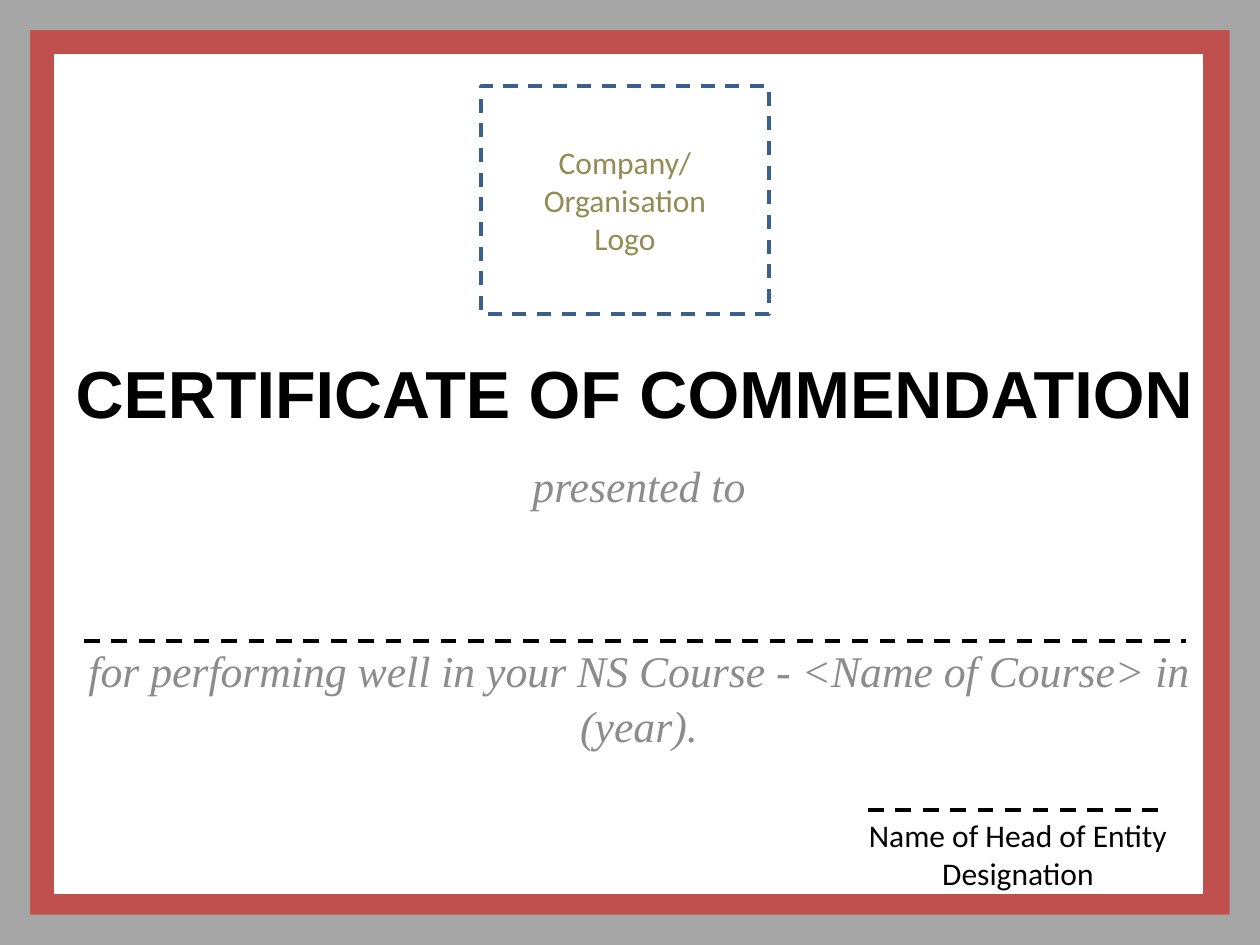
from dataclasses import dataclass

from lxml import etree
from pptx import Presentation
from pptx.dml.color import RGBColor
from pptx.enum import dml, shapes, text
from pptx.oxml.ns import qn
from pptx.util import Pt

SCALE = 914400 / 126
BLACK = RGBColor(0x00, 0x00, 0x00)
GRAY = RGBColor(0xA6, 0xA6, 0xA6)
SOFT = RGBColor(0x8C, 0x8C, 0x8C)
RED = RGBColor(0xC0, 0x50, 0x4D)
BLUE = RGBColor(0x3A, 0x5F, 0x8C)
TAN = RGBColor(0x94, 0x8A, 0x54)


@dataclass(frozen=True)
class Box:
    x: int
    y: int
    w: int
    h: int


@dataclass(frozen=True)
class Style:
    font: str
    size: int
    color: RGBColor
    bold: bool = False
    italic: bool = False
    pitch: float = 1.0
    gap: int = 0


@dataclass(frozen=True)
class Label:
    box: Box
    lines: tuple[str, ...]
    style: Style
    anchor: text.MSO_ANCHOR = text.MSO_ANCHOR.TOP
    wrap: bool = True


@dataclass(frozen=True)
class Frame:
    box: Box
    edge: float
    color: RGBColor
    line: int = 0


@dataclass(frozen=True)
class Rule:
    x: int
    y: int
    end: int


PAGE = Box(0, 0, 1260, 945)
LOGO = Box(481, 86, 288, 228)
TITLE = Style("Arial", 38, BLACK, bold=True)
BODY = Style("Times New Roman", 25, SOFT, italic=True, pitch=1.05, gap=74)

LABELS = (
    Label(Box(-35, 290, 1339, 203), ("CERTIFICATE OF COMMENDATION",), TITLE,
          text.MSO_ANCHOR.MIDDLE),
    Label(Box(64, 450, 1150, 321),
          ("presented to",
           "for performing well in your NS Course - <Name of Course> in (year)."),
          BODY),
    Label(Box(854, 810, 328, 89), ("Name of Head of Entity", "Designation"),
          Style("Calibri", 18, BLACK), wrap=False),
)
FRAMES = (
    Frame(Box(18, 18, 1221, 912), 0.038, RED, 2),
    Frame(PAGE, 0.032, GRAY),
)
RULES = (Rule(84, 641, 1186), Rule(868, 810, 1167))


def px(n: int) -> int:
    return round(n * SCALE)


def area(box: Box) -> tuple[int, int, int, int]:
    return px(box.x), px(box.y), px(box.w), px(box.h)


def write(frame, lines: tuple[str, ...], style: Style, anchor, wrap: bool = True) -> None:
    frame.word_wrap = wrap
    frame.vertical_anchor = anchor
    for i, line in enumerate(lines):
        para = frame.paragraphs[0] if i == 0 else frame.add_paragraph()
        para.text = line
        para.alignment = text.PP_ALIGN.CENTER
        para.line_spacing = style.pitch
        para.space_before = Pt(style.gap if i else 0)
        font = para.font
        font.name, font.size = style.font, Pt(style.size)
        font.bold, font.italic = style.bold, style.italic
        font.color.rgb = style.color


def stroke(line, color: RGBColor, width: float, dash: bool = False) -> None:
    line.color.rgb = color
    line.width = Pt(width)
    if dash:
        line.dash_style = dml.MSO_LINE.DASH


def add_label(slide, label: Label) -> None:
    shape = slide.shapes.add_textbox(*area(label.box))
    write(shape.text_frame, label.lines, label.style, label.anchor, label.wrap)


def add_frame(slide, frame: Frame) -> None:
    shape = slide.shapes.add_shape(shapes.MSO_SHAPE.FRAME, *area(frame.box))
    shape.shadow.inherit = False
    shape.adjustments[0] = frame.edge
    shape.fill.solid()
    shape.fill.fore_color.rgb = frame.color
    if frame.line:
        stroke(shape.line, frame.color, frame.line)
    else:
        shape.line.fill.background()


def add_logo(slide) -> None:
    """Draw the dashed space that is kept for a logo."""
    shape = slide.shapes.add_shape(shapes.MSO_SHAPE.RECTANGLE, *area(LOGO))
    shape.shadow.inherit = False
    shape.fill.background()
    stroke(shape.line, BLUE, 2, dash=True)
    write(shape.text_frame, ("Company/", "Organisation", "Logo"),
          Style("Calibri", 18, TAN), text.MSO_ANCHOR.MIDDLE)


def add_rule(slide, rule: Rule) -> None:
    line = slide.shapes.add_connector(
        shapes.MSO_CONNECTOR.STRAIGHT,
        px(rule.x), px(rule.y), px(rule.end), px(rule.y))
    stroke(line.line, BLACK, 2.25, dash=True)
    etree.SubElement(line._element.spPr, qn("a:effectLst"))


def main() -> None:
    deck = Presentation()
    deck.slide_width, deck.slide_height = px(PAGE.w), px(PAGE.h)
    slide = deck.slides.add_slide(deck.slide_layouts[6])
    inner, outer = FRAMES
    *heads, sign = LABELS
    for label in heads:
        add_label(slide, label)
    add_frame(slide, inner)
    add_logo(slide)
    for rule in RULES:
        add_rule(slide, rule)
    add_label(slide, sign)
    add_frame(slide, outer)
    deck.save("out.pptx")


if __name__ == "__main__":
    main()
